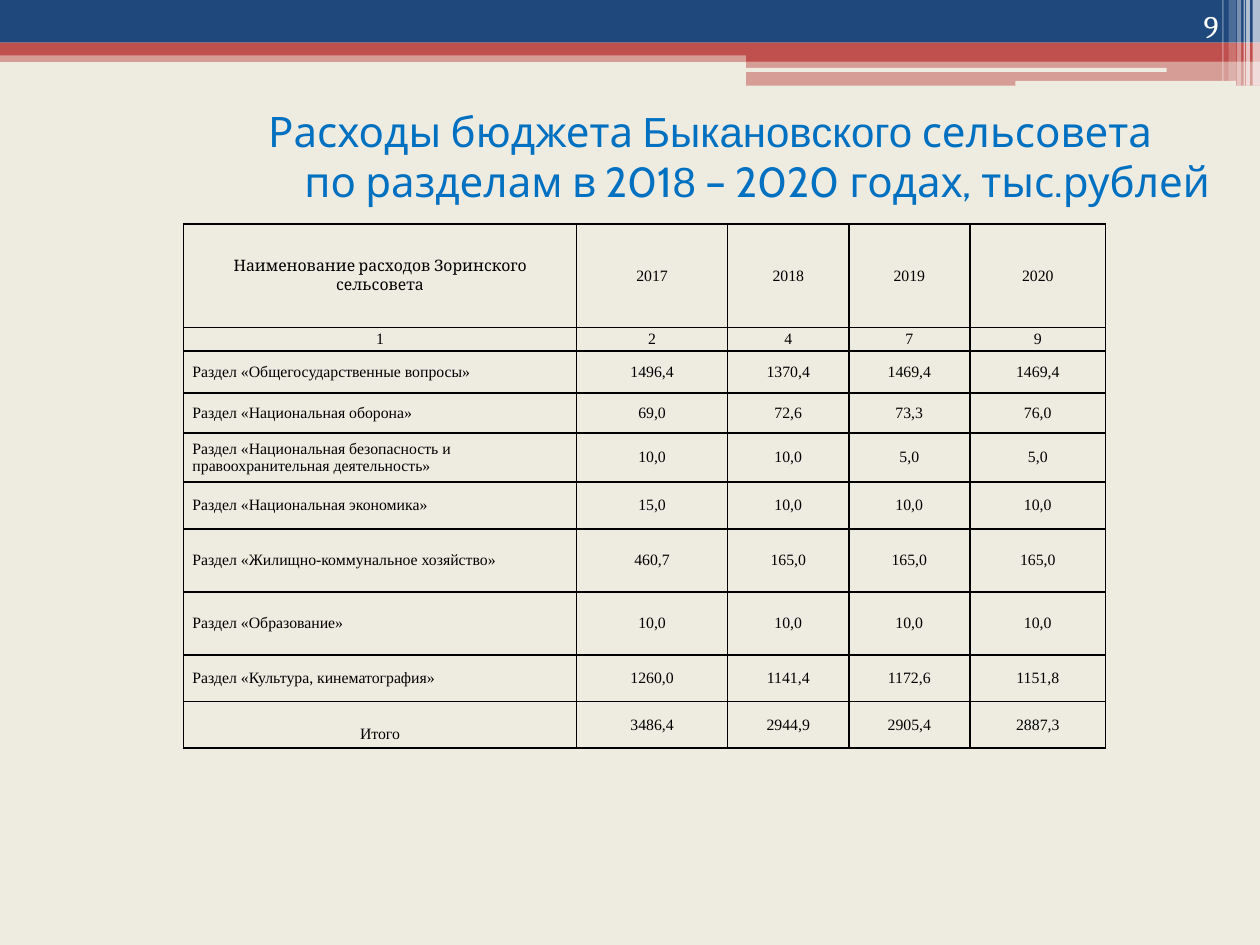
from dataclasses import dataclass, field

from lxml.etree import SubElement
from pptx import Presentation
from pptx.dml.color import RGBColor
from pptx.enum.shapes import MSO_SHAPE
from pptx.enum.text import MSO_ANCHOR, PP_ALIGN
from pptx.oxml.ns import qn
from pptx.slide import Slide
from pptx.util import Cm, Pt

COLORS = {
    "paper": "EEECE1",
    "navy": "1F497D",
    "red": "C0504D",
    "white": "FFFFFF",
    "title": "0070C0",
    "black": "000000",
}

BANDS = [
    (0, 1.02, 25.4, 0.23, "red", 50),
    (0, 0, 25.4, 0.86, "navy", 100),
    (0, 0.86, 25.4, 0.26, "red", 100),
    (15.04, 0.99, 10.36, 0.25, "red", 100),
    (15.04, 1.22, 10.36, 0.51, "red", 50),
]
SLOTS = [(15.01, 1.37, 8.51, 0.08), (20.47, 1.63, 4.45, 0.1)]
STRIPES = [
    (25.25, 0.15, 1.73, 65),
    (25.12, 0.08, 1.73, 65),
    (25.07, 0.03, 1.73, 60),
    (24.94, 0.08, 1.73, 40),
    (24.77, 0.15, 1.63, 20),
    (24.64, 0.03, 1.63, 30),
]

TITLE = [
    (3.23, [("Расходы бюджета ", "Cabin"), ("Быкановского", "Arial"),
            (" сельсовета", "Cabin")]),
    (5.13, [("по разделам в 201", "Cabin"), ("8", "Arial"),
            (" – 2020 годах, тыс.рублей", "Cabin")]),
]

EXPENSES = [
    ("Наименование расходов Зоринского сельсовета", "2017", "2018", "2019", "2020"),
    ("1", "2", "4", "7", "9"),
    ("Раздел «Общегосударственные вопросы»", "1496,4", "1370,4", "1469,4", "1469,4"),
    ("Раздел «Национальная оборона»", "69,0", "72,6", "73,3", "76,0"),
    ("Раздел «Национальная безопасность и правоохранительная деятельность»",
     "10,0", "10,0", "5,0", "5,0"),
    ("Раздел «Национальная экономика»", "15,0", "10,0", "10,0", "10,0"),
    ("Раздел «Жилищно-коммунальное хозяйство»", "460,7", "165,0", "165,0", "165,0"),
    ("Раздел «Образование»", "10,0", "10,0", "10,0", "10,0"),
    ("Раздел «Культура, кинематография»", "1260,0", "1141,4", "1172,6", "1151,8"),
    ("Итого", "3486,4", "2944,9", "2905,4", "2887,3"),
]
COLUMN_WIDTHS = [7.92, 3.05, 2.44, 2.44, 2.74]
ROW_HEIGHTS = [2.08, 0.48, 0.84, 0.81, 0.99, 0.94, 1.27, 1.27, 0.94, 0.94]


def write(paragraph, text, *, font, size, color, align=PP_ALIGN.CENTER):
    paragraph.alignment = align
    run = paragraph.add_run()
    run.text = text
    run.font.name = font
    run.font.size = Pt(size)
    run.font.color.rgb = RGBColor.from_string(color)


@dataclass
class BudgetSlide:
    """Hold the style and the slide being filled."""

    slide: Slide
    colors: dict = field(default_factory=lambda: COLORS)
    body_font: str = "Times New Roman"
    accent_font: str = "Cambria"
    title_size: int = 24
    number_size: int = 18
    table_size: int = 9
    border: int = 1

    def background(self):
        fill = self.slide.background.fill
        fill.solid()
        fill.fore_color.rgb = RGBColor.from_string(self.colors["paper"])

    def bar(self, left, top, width, height, color, opacity=100, rounded=False):
        kind = MSO_SHAPE.ROUNDED_RECTANGLE if rounded else MSO_SHAPE.RECTANGLE
        bar = self.slide.shapes.add_shape(
            kind, Cm(left), Cm(top), Cm(width), Cm(height))
        bar.shadow.inherit = False
        bar.line.fill.background()
        bar.fill.solid()
        bar.fill.fore_color.rgb = RGBColor.from_string(self.colors[color])
        if opacity < 100:
            tint = bar.fill._xPr.find(".//" + qn("a:srgbClr"))
            SubElement(tint, qn("a:alpha"), val=str(opacity * 1000))

    def text_frame(self, left, top, width, height, anchor):
        box = self.slide.shapes.add_textbox(
            Cm(left), Cm(top), Cm(width), Cm(height))
        box.text_frame.word_wrap = True
        box.text_frame.vertical_anchor = anchor
        return box.text_frame

    def title(self, lines):
        frame = self.text_frame(0, 2.13, 25.4, 2.01, MSO_ANCHOR.MIDDLE)
        for index, (indent, parts) in enumerate(lines):
            line = frame.add_paragraph() if index else frame.paragraphs[0]
            line._p.get_or_add_pPr().set("marL", str(Cm(indent)))
            for text, font in parts:
                write(line, text, font=font, size=self.title_size,
                      color=self.colors["title"])

    def page_number(self, number):
        frame = self.text_frame(22.71, 0, 2.11, 1.02, MSO_ANCHOR.BOTTOM)
        write(frame.paragraphs[0], number, font=self.accent_font,
              size=self.number_size, color=self.colors["white"],
              align=PP_ALIGN.RIGHT)

    def cell(self, cell, text, font, align):
        cell.margin_left = cell.margin_right = Cm(0.18)
        cell.margin_top = cell.margin_bottom = 0
        cell.vertical_anchor = MSO_ANCHOR.MIDDLE
        write(cell.text_frame.paragraphs[0], text, font=font,
              size=self.table_size, color=self.colors["black"], align=align)
        properties = cell._tc.get_or_add_tcPr()
        for side in ("lnL", "lnR", "lnT", "lnB"):
            line = SubElement(properties, qn(f"a:{side}"), w=str(Pt(self.border)))
            solid = SubElement(line, qn("a:solidFill"))
            SubElement(solid, qn("a:srgbClr"), val=self.colors["black"])
        cell.fill.background()

    def table(self, rows, widths, heights):
        table = self.slide.shapes.add_table(
            len(rows), len(widths), Cm(3.7), Cm(4.52),
            Cm(sum(widths)), Cm(sum(heights))).table
        table.first_row = table.horz_banding = False
        for column, width in zip(table.columns, widths):
            column.width = Cm(width)
        for row, height in zip(table.rows, heights):
            row.height = Cm(height)
        for r, values in enumerate(rows):
            for c, text in enumerate(values):
                section = text.startswith("Раздел")
                align = PP_ALIGN.LEFT if section else PP_ALIGN.CENTER
                font = self.body_font if r or c else self.accent_font
                self.cell(table.cell(r, c), text, font, align)
        total = table.cell(len(rows) - 1, 0)
        total.vertical_anchor = MSO_ANCHOR.BOTTOM
        total.margin_bottom = Cm(0.1)


def main():
    deck = Presentation()
    deck.slide_width, deck.slide_height = Cm(25.4), Cm(19.05)
    budget = BudgetSlide(deck.slides.add_slide(deck.slide_layouts[6]))
    budget.background()
    for band in BANDS:
        budget.bar(*band)
    for slot in SLOTS:
        budget.bar(*slot, "paper", rounded=True)
    for left, width, height, opacity in STRIPES:
        budget.bar(left, 0, width, height, "white", opacity)
    budget.title(TITLE)
    budget.page_number("9")
    budget.table(EXPENSES, COLUMN_WIDTHS, ROW_HEIGHTS)
    deck.save("out.pptx")


if __name__ == "__main__":
    main()
